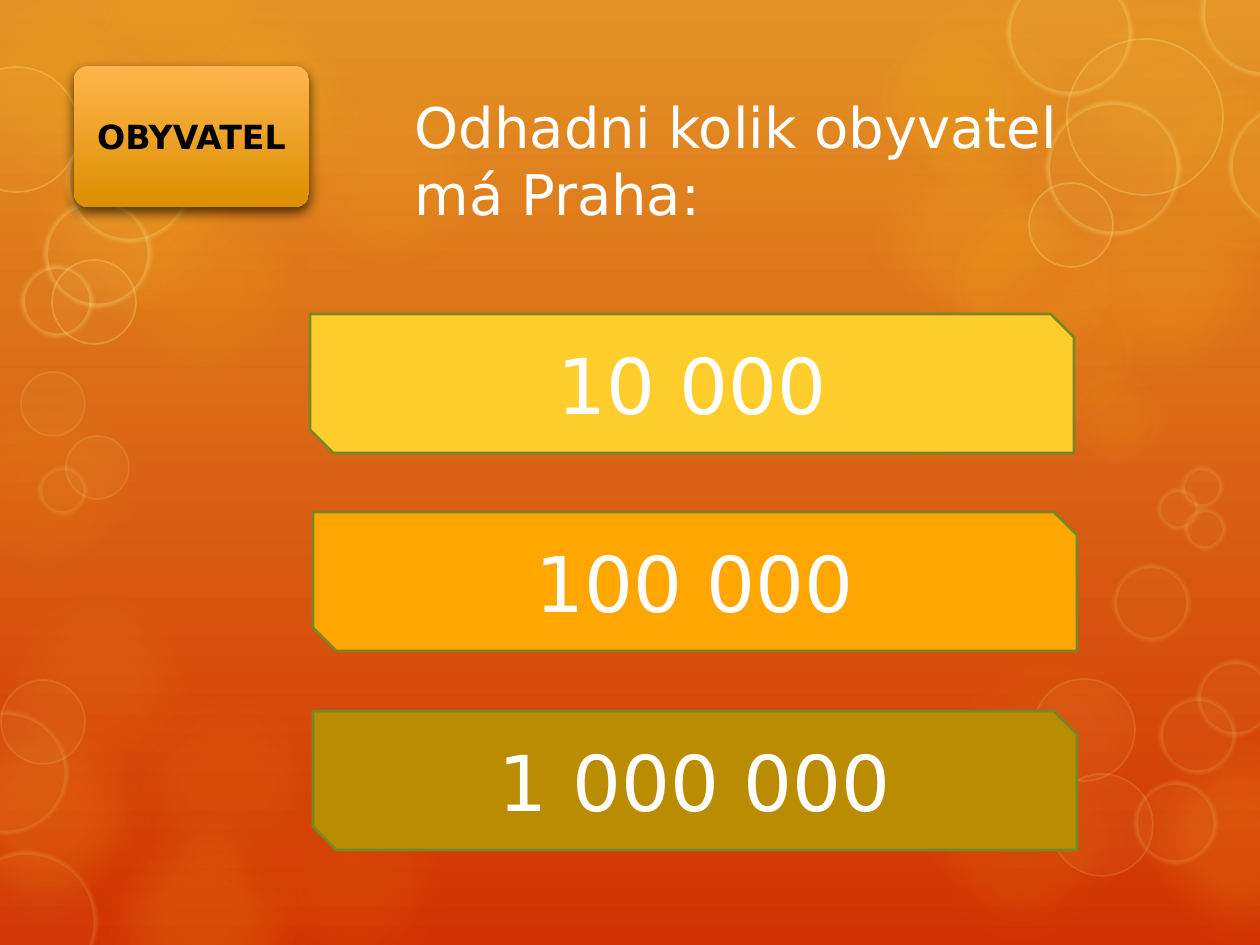
from pptx import Presentation
from pptx.dml.color import RGBColor
from pptx.enum.shapes import MSO_SHAPE
from pptx.enum.text import MSO_ANCHOR, MSO_AUTO_SIZE, PP_ALIGN
from pptx.oxml.ns import qn
from pptx.util import Pt
from lxml.etree import SubElement

PX = 914400 // 126
WIDTH, HEIGHT = 1260, 945
FONT = "DejaVu Sans"

SKY, EMBER = RGBColor(0xE3, 0x93, 0x25), RGBColor(0xD1, 0x32, 0x02)
GOLD = RGBColor(0xFD, 0xC6, 0x1B)
PALE = RGBColor(0xFF, 0xE2, 0x81)
CREAM = RGBColor(0xFE, 0xEB, 0xAE)
PEACH, AMBER = RGBColor(0xFF, 0xB5, 0x4D), RGBColor(0xDB, 0x8F, 0x00)
OLIVE = RGBColor(0x77, 0x87, 0x26)
WHITE, BLACK = RGBColor(255, 255, 255), RGBColor(0, 0, 0)

# left, top, diameter, fill opacity in percent
GLOWS = [
    (-32, 557, 263, 8), (72, 151, 263, 10), (258, 39, 263, 10), (72, 790, 263, 16),
    (-70, -41, 263, 14), (127, -23, 263, 20), (0, 91, 263, 15), (1033, -41, 263, 10),
    (843, -37, 263, 10), (1033, 151, 263, 15), (1110, 708, 263, 16), (919, 601, 263, 5),
    (-86, 682, 263, 16), (97, 660, 263, 8), (843, 108, 263, 15), (890, 708, 263, 10),
    (218, 751, 263, 8), (-87, 355, 263, 8), (850, 330, 168, 10),
]
# left, top, diameter
HALOS = [
    (1157, 82, 173), (874, 29, 144), (948, 200, 168),
    (994, 282, 144), (1067, 367, 100), (94, -82, 164),
]
# left, top, diameter, line width in points, line opacity
RINGS = [
    (1, 680, 84, 1, 15), (-44, 851, 141, 5, 15), (-55, 711, 123, 5, 15),
    (-46, 67, 125, 1, 30), (66, 116, 126, 5, 30), (44, 200, 107, 5, 30),
    (52, 260, 84, 1, 30), (21, 265, 72, 5, 30), (1007, -30, 125, 5, 30),
    (1201, -50, 126, 5, 30), (1067, 39, 156, 1, 30), (1229, 103, 125, 5, 30),
    (1046, 101, 134, 5, 30), (1029, 183, 84, 1, 30), (1051, 774, 102, 1, 15),
    (961, 722, 102, 5, 15), (1033, 679, 102, 1, 15), (1134, 781, 83, 5, 15),
    (1113, 564, 77, 5, 15), (1159, 697, 77, 5, 15), (1197, 660, 76, 5, 15),
    (1181, 466, 42, 5, 15), (1157, 488, 42, 5, 15), (1184, 508, 42, 5, 15),
    (21, 372, 64, 1, 15), (66, 436, 63, 1, 15), (38, 466, 49, 5, 15),
]
ANSWERS = [
    ("10 000", 310, 314, RGBColor(0xFF, 0xCE, 0x2D)),
    ("100 000", 313, 512, RGBColor(0xFF, 0xA6, 0x00)),
    ("1 000 000", 313, 711, RGBColor(0xBA, 0x8C, 0x01)),
]

deck = Presentation()
deck.slide_width, deck.slide_height = WIDTH * PX, HEIGHT * PX
page = deck.slides.add_slide(deck.slide_layouts[5])


def add_bubble(left, top, size, color, opacity, soft, line=None):
    """Draw a translucent circle.

    soft is the soft edge in points; line is (color, points, opacity).
    """
    bubble = page.shapes.add_shape(
        MSO_SHAPE.OVAL, left * PX, top * PX, size * PX, size * PX)
    bubble.shadow.inherit = False
    bubble.fill.solid()
    bubble.fill.fore_color.rgb = color
    opacities = [opacity]
    if line:
        bubble.line.color.rgb, bubble.line.width = line[0], Pt(line[1])
        opacities.append(line[2])
    else:
        bubble.line.fill.background()
    properties = bubble.element.spPr
    for paint, percent in zip(properties.iter(qn("a:srgbClr")), opacities):
        SubElement(paint, qn("a:alpha"), val=str(percent * 1000))
    if soft:
        SubElement(properties.find(qn("a:effectLst")), qn("a:softEdge"),
                   rad=str(int(Pt(soft))))


def write(shape, text, size, color, align, bold=False):
    frame = shape.text_frame
    frame.text = text
    frame.word_wrap = True
    frame.auto_size = MSO_AUTO_SIZE.NONE
    frame.vertical_anchor = MSO_ANCHOR.MIDDLE
    para = frame.paragraphs[0]
    para.alignment = align
    font = para.runs[0].font
    font.name, font.size, font.bold = FONT, Pt(size), bold
    font.color.rgb = color


# Background
backdrop = page.background.fill
backdrop.gradient()
backdrop.gradient_angle = 270
for stop, color in zip(backdrop.gradient_stops, (SKY, EMBER)):
    stop.color.rgb = color

for left, top, size, opacity in GLOWS:
    add_bubble(left, top, size, GOLD, opacity, 25)
for left, top, size in HALOS:
    add_bubble(left, top, size, GOLD, 10, 12, (CREAM, 14, 6))
for left, top, size, points, line_opacity in RINGS:
    add_bubble(left, top, size, PALE, 5, 2.5 if points == 5 else 0,
               (PALE, points, line_opacity))

# Question, brought in front of the bubbles
title = page.shapes.title
title.left, title.top, title.width, title.height = (
    402 * PX, 96 * PX, 719 * PX, 127 * PX)
write(title, "Odhadni kolik obyvatel má Praha:", 32, WHITE, PP_ALIGN.LEFT)
title.element.getparent().append(title.element)

# Category label
label = page.shapes.add_shape(
    MSO_SHAPE.ROUNDED_RECTANGLE, 74 * PX, 66 * PX, 235 * PX, 141 * PX)
label.adjustments[0] = 0.1
label.fill.gradient()
label.fill.gradient_angle = 270
for stop, color in zip(label.fill.gradient_stops, (PEACH, AMBER)):
    stop.color.rgb = color
label.line.fill.background()
label.shadow.inherit = False
shadow = SubElement(label.element.spPr.find(qn("a:effectLst")), qn("a:outerShdw"),
                    blurRad=str(int(Pt(7))), dist=str(int(Pt(3))), dir="5400000",
                    rotWithShape="0")
shade = SubElement(shadow, qn("a:srgbClr"), val=str(BLACK))
SubElement(shade, qn("a:alpha"), val="65000")
write(label, "OBYVATEL", 19, BLACK, PP_ALIGN.CENTER, bold=True)

# Answers
for text, left, top, color in ANSWERS:
    answer = page.shapes.add_shape(
        MSO_SHAPE.SNIP_2_DIAG_RECTANGLE, left * PX, top * PX, 764 * PX, 139 * PX)
    answer.shadow.inherit = False
    answer.fill.solid()
    answer.fill.fore_color.rgb = color
    answer.line.color.rgb, answer.line.width = OLIVE, Pt(1.5)
    write(answer, text, 44, WHITE, PP_ALIGN.CENTER)

deck.save("out.pptx")
